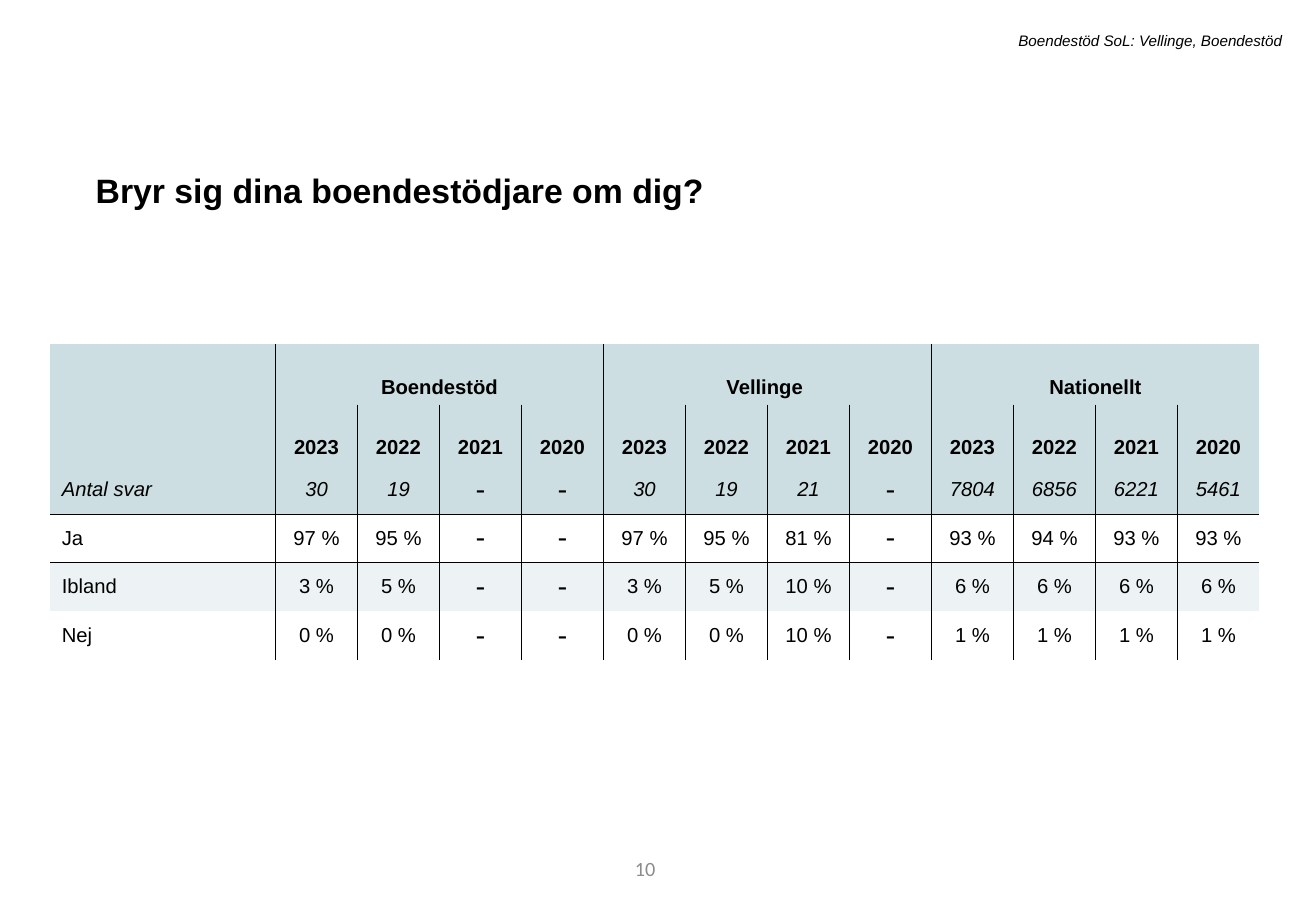
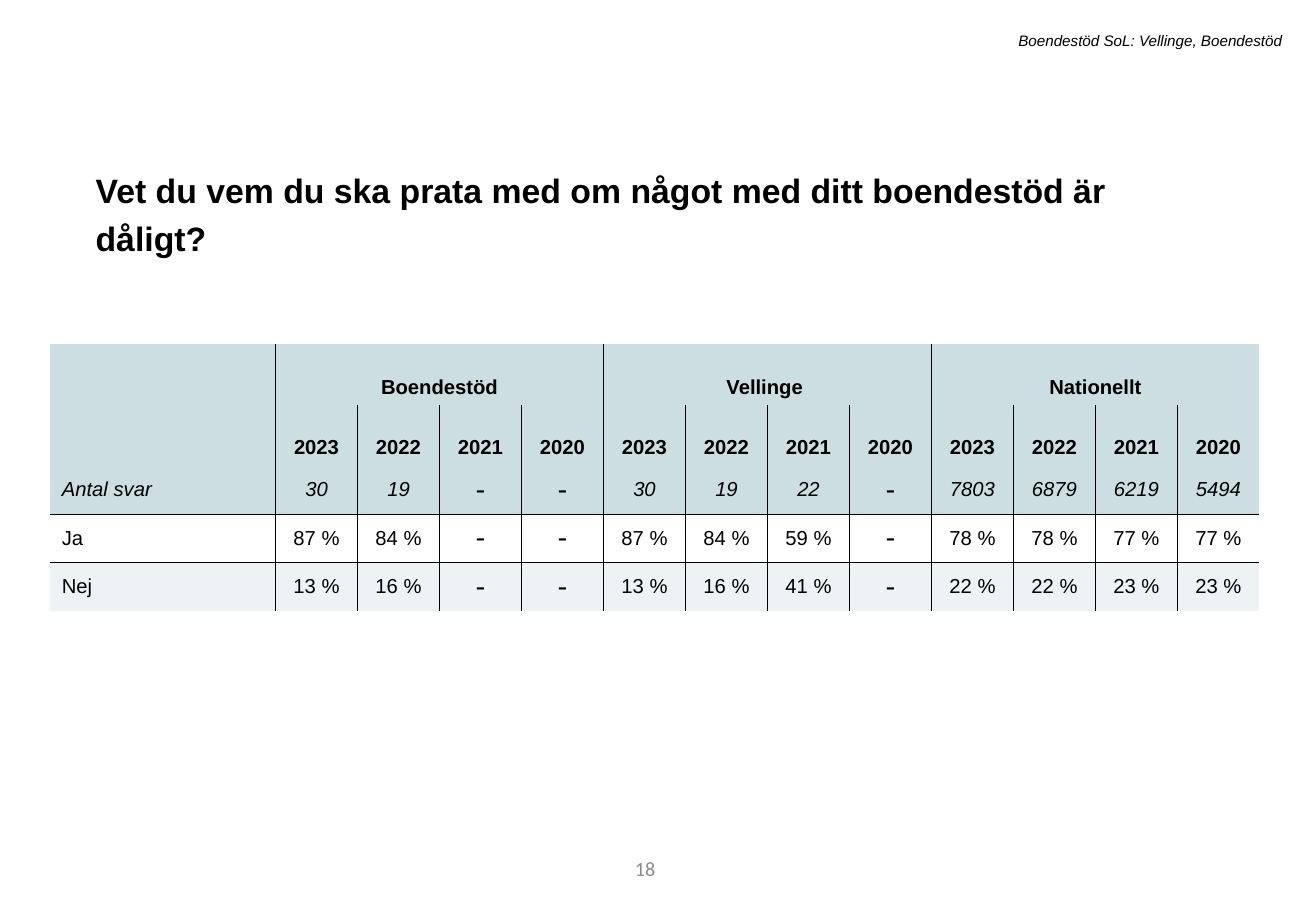
from dataclasses import dataclass

from lxml import etree
from pptx import Presentation
from pptx.dml.color import RGBColor
from pptx.enum.text import MSO_ANCHOR, MSO_AUTO_SIZE, PP_ALIGN
from pptx.oxml.ns import qn
from pptx.util import Cm, Pt

LEFT, CENTER, RIGHT = PP_ALIGN.LEFT, PP_ALIGN.CENTER, PP_ALIGN.RIGHT
TOP, MIDDLE, BOTTOM = MSO_ANCHOR.TOP, MSO_ANCHOR.MIDDLE, MSO_ANCHOR.BOTTOM
GROW, FIXED = MSO_AUTO_SIZE.SHAPE_TO_FIT_TEXT, MSO_AUTO_SIZE.NONE


@dataclass(frozen=True)
class Theme:
    ink: str = "000000"
    muted: str = "8C8C8C"
    header_fill: str = "CCDEE1"
    stripe_fill: str = "EDF3F4"
    font: str = "Arial"
    number_font: str = "Calibri"
    title_size: int = 20
    table_size: int = 12
    dash_size: int = 18
    caption_size: int = 9
    rule_width: float = 0.25


@dataclass(frozen=True)
class Box:
    left: float
    top: float
    width: float
    height: float


@dataclass(frozen=True)
class Answer:
    label: str
    percents: tuple[int | None, ...]


@dataclass(frozen=True)
class Question:
    page: int
    title: str
    counts: tuple[int | None, ...]
    answers: tuple[Answer, ...]


THEME = Theme()
PAGE_NUMBER = Box(7.75, 17.65, 6.2, 1.02)
TITLE = Box(1.75, 3.25, 23.88, 1.2)
CAPTION = Box(4.55, 0.53, 22.5, 0.64)
TABLE = Box(1.04, 7.19, 25.29, 5.87)
LABEL_WIDTH = 4.72
HEADER_HEIGHT = 1.27
COUNT_HEIGHT = 0.64
ANSWER_HEIGHT = 0.71
HEADER_ROWS = 3
COUNT_ROW = HEADER_ROWS - 1

CAPTION_TEXT = "Boendestöd SoL: Vellinge, Boendestöd"
GROUPS = ("Boendestöd", "Vellinge ", "Nationellt")
YEARS = ("2023", "2022", "2021", "2020")
VALUE_COLUMNS = len(GROUPS) * len(YEARS)
NO_TABLE_STYLE = "{2D5ABB26-0587-4C30-8999-92F81FD0307C}"

QUESTIONS = (
    Question(
        10,
        "Bryr sig dina boendestödjare om dig?",
        (30, 19, None, None, 30, 19, 21, None, 7804, 6856, 6221, 5461),
        (
            Answer("Ja", (97, 95, None, None, 97, 95, 81, None, 93, 94, 93, 93)),
            Answer("Ibland", (3, 5, None, None, 3, 5, 10, None, 6, 6, 6, 6)),
            Answer("Nej", (0, 0, None, None, 0, 0, 10, None, 1, 1, 1, 1)),
        ),
    ),
    Question(
        18,
        "Vet du vem du ska prata med om något med ditt boendestöd är dåligt?",
        (30, 19, None, None, 30, 19, 22, None, 7803, 6879, 6219, 5494),
        (
            Answer("Ja", (87, 84, None, None, 87, 84, 59, None, 78, 78, 77, 77)),
            Answer("Nej", (13, 16, None, None, 13, 16, 41, None, 22, 22, 23, 23)),
        ),
    ),
)


def write(frame, text: str, *, size: int = THEME.table_size, font: str = THEME.font,
          color: str = THEME.ink, bold: bool = False, italic: bool = False,
          align=LEFT, line_spacing: float | None = None, before: int | None = None) -> None:
    paragraph = frame.paragraphs[0]
    paragraph.alignment = align
    if line_spacing is not None:
        paragraph.line_spacing = line_spacing
    if before is not None:
        paragraph.space_before = Pt(before)
    run = paragraph.add_run()
    run.text = text
    run.font.size = Pt(size)
    run.font.name = font
    run.font.bold = bold
    run.font.italic = italic
    run.font.color.rgb = RGBColor.from_string(color)


def add_text(slide, box: Box, text: str, *, anchor=TOP, fit=GROW, **text_format) -> None:
    area = slide.shapes.add_textbox(Cm(box.left), Cm(box.top), Cm(box.width), Cm(box.height))
    frame = area.text_frame
    frame.word_wrap = True
    frame.auto_size = fit
    frame.vertical_anchor = anchor
    write(frame, text, **text_format)


def add_rule(cell, edge: str) -> None:
    line = etree.SubElement(cell._tc.get_or_add_tcPr(), qn(f"a:ln{edge}"),
                            w=str(Pt(THEME.rule_width)))
    fill = etree.SubElement(line, qn("a:solidFill"))
    etree.SubElement(fill, qn("a:srgbClr"), val=THEME.ink)


def has_rule_before(row: int, column: int) -> bool:
    if not 0 < column <= VALUE_COLUMNS:
        return False
    return row > 0 or (column - 1) % len(YEARS) == 0


def style_cell(cell, row: int, column: int) -> None:
    edges = {
        "L": has_rule_before(row, column),
        "R": has_rule_before(row, column + 1),
        "T": row == HEADER_ROWS,
        "B": row == COUNT_ROW,
    }
    for edge, ruled in edges.items():
        if ruled:
            add_rule(cell, edge)
    if row < HEADER_ROWS:
        cell.fill.solid()
        cell.fill.fore_color.rgb = RGBColor.from_string(THEME.header_fill)
    elif (row - HEADER_ROWS) % 2:
        cell.fill.solid()
        cell.fill.fore_color.rgb = RGBColor.from_string(THEME.stripe_fill)
    else:
        cell.fill.background()
    cell.vertical_anchor = BOTTOM if row < COUNT_ROW else MIDDLE


def write_values(table, row: int, label: str, values: tuple[int | None, ...],
                 *, unit: str = "", italic: bool = False) -> None:
    write(table.cell(row, 0).text_frame, label, italic=italic)
    for column, value in enumerate(values, start=1):
        frame = table.cell(row, column).text_frame
        if value is None:
            write(frame, "-", size=THEME.dash_size, font=THEME.number_font, align=CENTER)
        else:
            write(frame, f"{value}{unit}", italic=italic, align=CENTER)


def add_results(slide, question: Question) -> None:
    heights = [HEADER_HEIGHT] * COUNT_ROW + [COUNT_HEIGHT]
    heights += [ANSWER_HEIGHT] * len(question.answers)
    table = slide.shapes.add_table(
        len(heights), VALUE_COLUMNS + 1,
        Cm(TABLE.left), Cm(TABLE.top), Cm(TABLE.width), Cm(sum(heights)),
    ).table
    table.first_row = False
    table.horz_banding = False
    table._tbl.tblPr.find(qn("a:tableStyleId")).text = NO_TABLE_STYLE

    value_width = (TABLE.width - LABEL_WIDTH) / VALUE_COLUMNS
    for index, column in enumerate(table.columns):
        column.width = Cm(value_width if index else LABEL_WIDTH)
    for row, height in enumerate(heights):
        table.rows[row].height = Cm(height)
        for column in range(VALUE_COLUMNS + 1):
            style_cell(table.cell(row, column), row, column)

    for index, group in enumerate(GROUPS):
        first = 1 + index * len(YEARS)
        heading = table.cell(0, first)
        heading.merge(table.cell(0, first + len(YEARS) - 1))
        write(heading.text_frame, group, bold=True, align=CENTER)
        for column, year in enumerate(YEARS, start=first):
            write(table.cell(1, column).text_frame, year, bold=True, align=CENTER)
    write_values(table, COUNT_ROW, "Antal svar", question.counts, italic=True)
    for row, answer in enumerate(question.answers, start=HEADER_ROWS):
        write_values(table, row, answer.label, answer.percents, unit=" %")


def add_question(deck, question: Question) -> None:
    slide = deck.slides.add_slide(deck.slide_layouts[6])
    add_text(slide, PAGE_NUMBER, str(question.page), anchor=MIDDLE, fit=FIXED,
             font=THEME.number_font, color=THEME.muted, align=RIGHT)
    add_text(slide, TITLE, question.title, size=THEME.title_size, bold=True,
             line_spacing=1.2, before=10)
    add_text(slide, CAPTION, CAPTION_TEXT, size=THEME.caption_size, italic=True, align=RIGHT)
    add_results(slide, question)


def main() -> None:
    deck = Presentation()
    deck.slide_width = Cm(27.51)
    deck.slide_height = Cm(19.05)
    for question in QUESTIONS:
        add_question(deck, question)
    deck.save("out.pptx")


if __name__ == "__main__":
    main()
